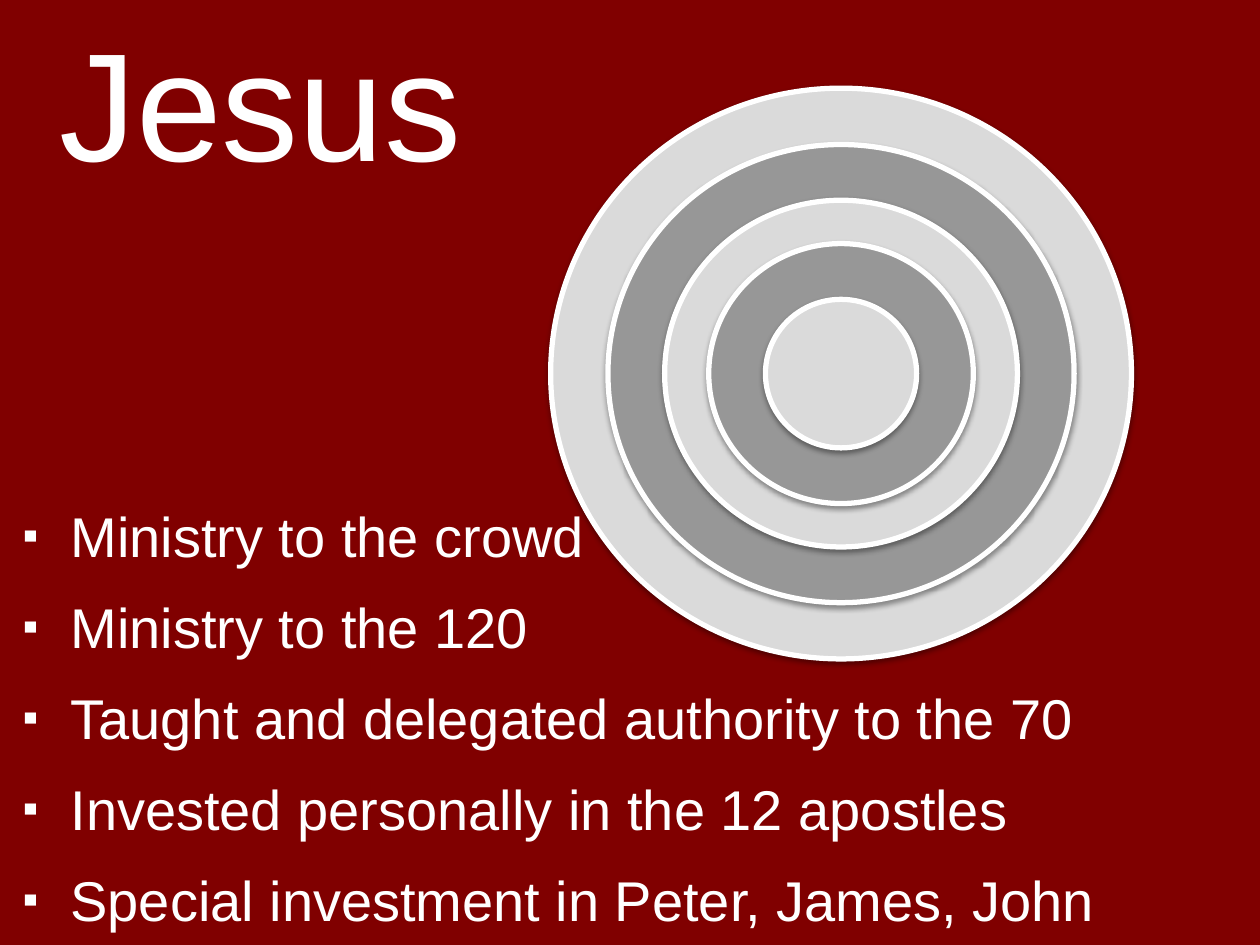
from lxml import etree
from pptx import Presentation
from pptx.dml.color import RGBColor
from pptx.enum.shapes import MSO_SHAPE
from pptx.enum.text import MSO_ANCHOR, MSO_AUTO_SIZE, PP_ALIGN
from pptx.oxml.ns import qn
from pptx.util import Inches, Pt

ELLIPSE = MSO_SHAPE.OVAL
CENTER, LEFT = PP_ALIGN.CENTER, PP_ALIGN.LEFT
TOP, BOTTOM = MSO_ANCHOR.TOP, MSO_ANCHOR.BOTTOM
NO_AUTOFIT = MSO_AUTO_SIZE.NONE

FONT = "Arial"
COLORS = {
    "background": "800000",
    "text": "FFFFFF",
    "ring_line": "FFFFFF",
    "light_ring": "DADADA",
    "dark_ring": "979797",
    "shadow": "000000",
}
MINISTRY_LEVELS = [
    "Ministry to the crowd",
    "Ministry to the 120",
    "Taught and delegated authority to the 70",
    "Invested personally in the 12 apostles",
    "Special investment in Peter, James, John",
]
RING_WIDTHS = [4.61, 3.7, 2.8, 2.1, 1.2]


def color(name):
    return RGBColor.from_string(COLORS[name])


def place(shape, box):
    shape.left, shape.top, shape.width, shape.height = map(Inches, box)


def style_text(paragraph, size):
    for run in paragraph.runs:
        run.font.name = FONT
        run.font.size = Pt(size)
        run.font.color.rgb = color("text")


def add_square_bullet(paragraph):
    props = paragraph._p.get_or_add_pPr()
    props.set("marL", str(Inches(0.38)))
    props.set("indent", str(-Inches(0.38)))
    etree.SubElement(props, qn("a:buSzPct"), val="80000")
    etree.SubElement(props, qn("a:buFont"), typeface=FONT)
    etree.SubElement(props, qn("a:buChar"), char="▪")


def add_soft_shadow(shape):
    """Give the shape a short, blurred shadow straight below it."""
    shape.shadow.inherit = False
    effects = shape._element.spPr.find(qn("a:effectLst"))
    shadow = etree.SubElement(
        effects, qn("a:outerShdw"), blurRad=str(Pt(3.1)), dist=str(Pt(1.6)),
        dir="5400000", rotWithShape="0")
    shade = etree.SubElement(shadow, qn("a:srgbClr"), val=COLORS["shadow"])
    etree.SubElement(shade, qn("a:alpha"), val="38000")


def fill_title(title, box):
    place(title, box)
    frame = title.text_frame
    frame.text = "Jesus"
    frame.auto_size = NO_AUTOFIT
    frame.vertical_anchor = BOTTOM
    heading = frame.paragraphs[0]
    heading.alignment = CENTER
    style_text(heading, 88)


def fill_levels(body, box):
    place(body, box)
    frame = body.text_frame
    frame.text = "\n".join(MINISTRY_LEVELS)
    frame.auto_size = NO_AUTOFIT
    frame.vertical_anchor = TOP
    for level in frame.paragraphs:
        add_square_bullet(level)
        level.alignment = LEFT
        level.line_spacing = 1.04
        level.space_before = Pt(0)
        level.space_after = Pt(12)
        style_text(level, 32)


def add_rings(slide, box):
    """Draw concentric rings, the largest filling the box."""
    left, top, width, height = box
    for index, ring_width in enumerate(RING_WIDTHS):
        ring_height = ring_width * height / width
        ring = slide.shapes.add_shape(
            ELLIPSE,
            Inches(left + (width - ring_width) / 2),
            Inches(top + (height - ring_height) / 2),
            Inches(ring_width), Inches(ring_height))
        ring.fill.solid()
        ring.fill.fore_color.rgb = color("dark_ring" if index % 2 else "light_ring")
        ring.line.color.rgb = color("ring_line")
        ring.line.width = Pt(3)
        add_soft_shadow(ring)


def main():
    deck = Presentation()
    deck.slide_width, deck.slide_height = Inches(10), Inches(7.5)
    slide = deck.slides.add_slide(deck.slide_layouts[1])
    slide.background.fill.solid()
    slide.background.fill.fore_color.rgb = color("background")
    fill_levels(slide.placeholders[1], (0.08, 3.91, 9.33, 3.59))
    fill_title(slide.shapes.title, (0, 0, 4.13, 1.58))
    add_rings(slide, (4.37, 0.7, 4.61, 4.53))
    deck.save("out.pptx")


if __name__ == "__main__":
    main()
